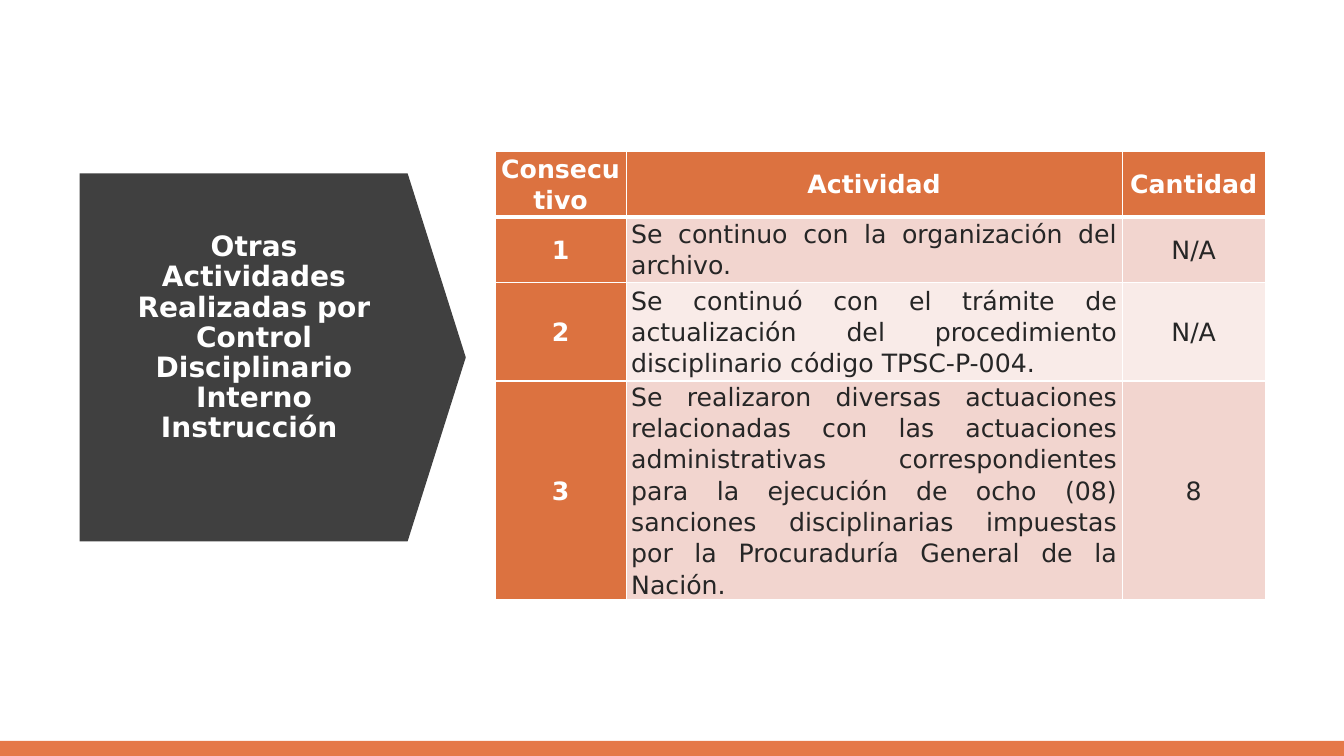
from lxml.etree import SubElement
from pptx import Presentation
from pptx.dml.color import RGBColor
from pptx.enum.shapes import MSO_SHAPE
from pptx.enum.text import MSO_ANCHOR, MSO_AUTO_SIZE, PP_ALIGN
from pptx.oxml.ns import qn
from pptx.util import Pt

PX = 9144  # EMU per px, 100 px to the inch
FONT = "DejaVu Sans"
COLORS = {
    "white": "FFFFFF",
    "arrow": "404040",
    "bar": "E57848",
    "header": "DC7240",
    "band_dark": "F2D5CF",
    "band_light": "F9EBE8",
    "ink": "262626",
}

TITLE = "Otras Actividades Realizadas por Control Disciplinario Interno Instrucción "
COLUMN_WIDTHS = [130, 492, 142]
ROW_HEIGHTS = [65, 65, 98, 198]
ROWS = [
    ("Consecutivo", "Actividad", "Cantidad"),
    ("1", "Se continuo con la organización del archivo.", "N/A"),
    ("2", "Se continuó con el trámite de actualización del procedimiento "
          "disciplinario código TPSC-P-004.", "N/A"),
    ("3", "Se realizaron diversas actuaciones relacionadas con las actuaciones "
          "administrativas correspondientes para la ejecución de ocho (08) sanciones "
          "disciplinarias impuestas por la Procuraduría General de la Nación.", "8"),
]


def color(name):
    return RGBColor.from_string(COLORS[name])


def px(*lengths):
    return [length * PX for length in lengths]


def add_filled_shape(page, kind, box, fill):
    shape = page.shapes.add_shape(kind, *px(*box))
    shape.shadow.inherit = False
    shape.fill.solid()
    shape.fill.fore_color.rgb = color(fill)
    shape.line.fill.background()
    return shape


def format_paragraph(paragraph, size, ink, bold, align, spacing):
    paragraph.alignment = align
    paragraph.line_spacing = spacing
    for span in paragraph.runs:
        span.font.name = FONT
        span.font.size = Pt(size)
        span.font.bold = bold
        span.font.color.rgb = color(ink)


def set_borders(cell, widths):
    properties = cell._tc.get_or_add_tcPr()
    for side, width in widths.items():
        line = SubElement(properties, qn("a:ln" + side), w=str(Pt(width)))
        fill = SubElement(line, qn("a:solidFill"))
        SubElement(fill, qn("a:srgbClr"), val=COLORS["white"])


# Arrow pointing right, with the slide title inside
def add_title_arrow(page, left, top, width, height):
    # The preset points down, so its box is turned about the same centre
    shift = (width - height) // 2
    arrow = add_filled_shape(page, MSO_SHAPE.DOWN_ARROW,
                             (left + shift, top - shift, height, width), "arrow")
    arrow.rotation = 270
    arrow.adjustments[0] = 1
    arrow.adjustments[1] = 0.158

    title = page.shapes.title
    title.left, title.top, title.width, title.height = px(
        left + 29, top + 64, width - 95, height - 86)
    page.shapes._spTree.append(title._element)  # bring in front of the arrow
    frame = title.text_frame
    frame.text = TITLE
    frame.word_wrap = True
    frame.auto_size = MSO_AUTO_SIZE.NONE
    frame.vertical_anchor = MSO_ANCHOR.MIDDLE
    frame.margin_top, frame.margin_bottom = px(0, 80)
    format_paragraph(frame.paragraphs[0], 20, "white", True, PP_ALIGN.CENTER, 0.9)


# Table of activities
def add_activity_table(page, left, top):
    table = page.shapes.add_table(
        len(ROWS), len(COLUMN_WIDTHS),
        *px(left, top, sum(COLUMN_WIDTHS), sum(ROW_HEIGHTS))).table
    for column, width in zip(table.columns, COLUMN_WIDTHS):
        column.width = width * PX
    for row, height in zip(table.rows, ROW_HEIGHTS):
        row.height = height * PX

    for r, texts in enumerate(ROWS):
        band = "band_dark" if r % 2 else "band_light"
        for c, text in enumerate(texts):
            heading = r == 0 or c == 0
            cell = table.cell(r, c)
            cell.text_frame.text = text
            cell.vertical_anchor = MSO_ANCHOR.MIDDLE
            cell.margin_left, cell.margin_right = px(5, 5)
            cell.margin_top = cell.margin_bottom = 0
            set_borders(cell, {"L": 1, "R": 1, "T": 3 if r == 1 else 1,
                               "B": 3 if r == 0 else 1})
            cell.fill.solid()
            cell.fill.fore_color.rgb = color("header" if heading else band)
            format_paragraph(
                cell.text_frame.paragraphs[0], 18, "white" if heading else "ink", heading,
                PP_ALIGN.JUSTIFY if c == 1 and not heading else PP_ALIGN.CENTER, 1.07)


def main():
    deck = Presentation()
    deck.slide_width, deck.slide_height = px(1333, 750)
    page = deck.slides.add_slide(deck.slide_layouts[5])
    # Bottom bar
    add_filled_shape(page, MSO_SHAPE.RECTANGLE, (0, 735, 1333, 15), "bar")
    add_title_arrow(page, 79, 172, 383, 365)
    add_activity_table(page, 491, 150)
    deck.save("out.pptx")


if __name__ == "__main__":
    main()
